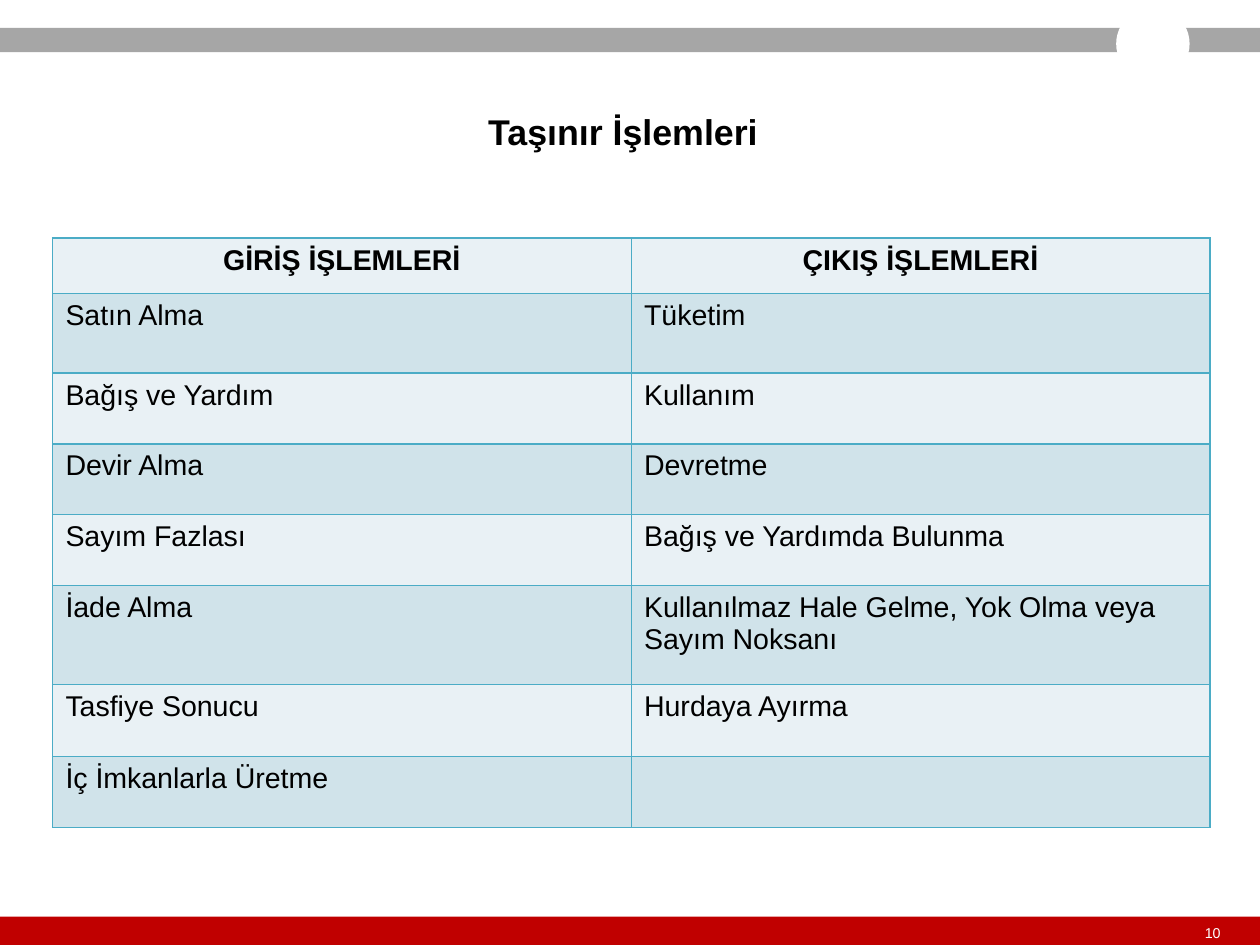
from lxml import etree
from pptx import Presentation
from pptx import util as u
from pptx.dml.color import RGBColor
from pptx.enum import shapes, text
from pptx.oxml import ns

SHAPE = shapes.MSO_SHAPE
ALIGN = text.PP_ALIGN
MIDDLE = text.MSO_ANCHOR.MIDDLE
HEADINGS = ("GİRİŞ İŞLEMLERİ", "ÇIKIŞ İŞLEMLERİ")
OPERATIONS = [
    ("Satın Alma", "Tüketim"),
    ("Bağış ve Yardım", "Kullanım"),
    ("Devir Alma", "Devretme"),
    ("Sayım Fazlası", "Bağış ve Yardımda Bulunma"),
    ("İade Alma", "Kullanılmaz Hale Gelme, Yok Olma veya Sayım Noksanı"),
    ("Tasfiye Sonucu", "Hurdaya Ayırma"),
    ("İç İmkanlarla Üretme", ""),
]
ROW_HEIGHTS = (1.1, 1.57, 1.4, 1.4, 1.4, 1.96, 1.42, 1.4)


def colour(value):
    """Turn a hex string into a colour."""
    return RGBColor.from_string(value)


def assign(target, values):
    """Set attributes from a dict of format values."""
    for name, value in values.items():
        setattr(target, name, value)


def write(frame, words, size, ink="000000", bold=False, **layout):
    """Write one formatted paragraph into a text frame."""
    para = frame.paragraphs[0]
    assign(para, layout)
    span = para.add_run()
    span.text = words
    assign(span.font, {"name": "Arial", "size": u.Pt(size), "bold": bold})
    span.font.color.rgb = colour(ink)


def add_block(page, kind, box, fill):
    """Add a plain filled shape in a box given in centimetres."""
    block = page.shapes.add_shape(kind, *map(u.Cm, box))
    block.shadow.inherit = False
    block.fill.solid()
    block.fill.fore_color.rgb = colour(fill)
    block.line.fill.background()
    return block


def add_header(page, left, top, width):
    """Draw the grey band with its round white cut-out."""
    add_block(page, SHAPE.RECTANGLE, (left, top, width, 0.48), "A6A6A6")
    add_block(page, SHAPE.OVAL, (left + width - 2.84, top - 0.41, 1.45, 1.45), "FFFFFF")


def add_footer(page, left, top, width, height):
    """Draw the red band with the page number."""
    add_block(page, SHAPE.RECTANGLE, (left, top, width, height), "C00000")
    number = page.shapes.add_textbox(
        *map(u.Cm, (left + width - 1.09, top + 0.15, 0.36, 0.33)))
    assign(number.text_frame, {
        "margin_left": 0, "margin_right": 0, "margin_top": 0, "margin_bottom": 0,
        "vertical_anchor": MIDDLE, "word_wrap": False})
    write(number.text_frame, "10", 8, "FFFFFF")


def add_title(page, left, top, width, height):
    """Place the centred title on its white panel."""
    panel = add_block(page, SHAPE.RECTANGLE, (left, top, width, height), "FFFFFF")
    margin = u.Cm(0.2)
    assign(panel.text_frame, {
        "margin_left": margin, "margin_right": margin, "margin_top": margin,
        "margin_bottom": margin, "vertical_anchor": MIDDLE, "word_wrap": True})
    write(panel.text_frame, "Taşınır İşlemleri", 20, bold=True,
          alignment=ALIGN.CENTER, line_spacing=1.5)


def add_borders(cell, ink, points):
    """Outline all four sides of a table cell."""
    properties = cell._tc.get_or_add_tcPr()
    for side in ("lnL", "lnR", "lnT", "lnB"):
        line = etree.SubElement(properties, ns.qn(f"a:{side}"), w=str(u.Pt(points)))
        fill = etree.SubElement(line, ns.qn("a:solidFill"))
        etree.SubElement(fill, ns.qn("a:srgbClr"), val=ink)


def add_operations(page, left, top, width):
    """Build the table of incoming and outgoing operations."""
    rows = [HEADINGS, *OPERATIONS]
    box = (left, top, width, sum(ROW_HEIGHTS))
    table = page.shapes.add_table(len(rows), 2, *map(u.Cm, box)).table
    assign(table, {"first_row": False, "horz_banding": False})
    for column in table.columns:
        column.width = u.Cm(width / 2)
    for index, (entries, height) in enumerate(zip(rows, ROW_HEIGHTS)):
        table.rows[index].height = u.Cm(height)
        heading = index == 0
        for cell, words in zip(table.rows[index].cells, entries):
            add_borders(cell, "4BACC6", 1)
            cell.fill.solid()
            cell.fill.fore_color.rgb = colour("D0E3EA" if index % 2 else "E9F1F5")
            if words:
                write(cell.text_frame, words, 16, bold=heading,
                      alignment=ALIGN.CENTER if heading else ALIGN.LEFT)


def main():
    """Build and save the slide."""
    deck = Presentation()
    width, height = 24.89, 18.67
    assign(deck, {"slide_width": u.Cm(width), "slide_height": u.Cm(height)})
    page = deck.slides.add_slide(deck.slide_layouts[6])
    add_footer(page, 0, height - 0.56, width, 0.56)
    add_header(page, 0, 0.55, width)
    add_title(page, 2.62, 1.8, 19.38, 1.17)
    add_operations(page, 1.04, 4.7, 22.86)
    deck.save("out.pptx")


if __name__ == "__main__":
    main()
